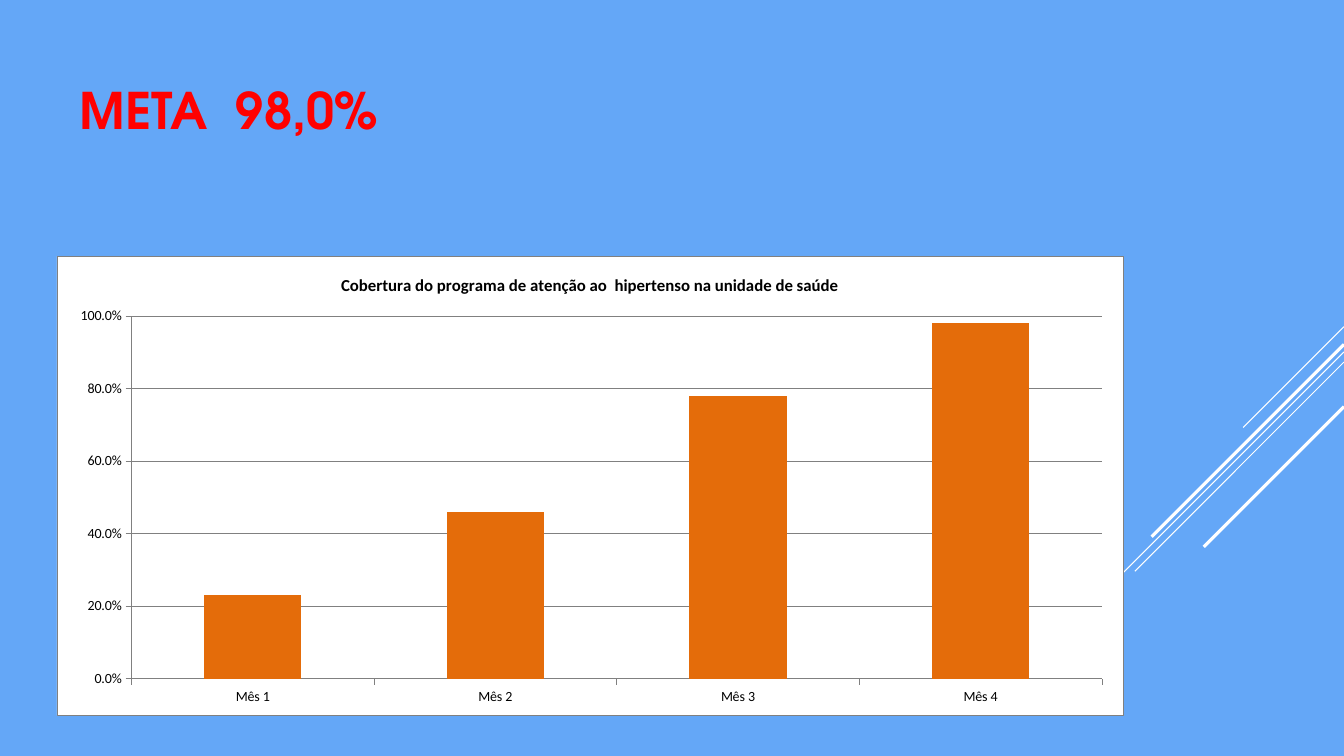
from lxml.etree import SubElement
from pptx import Presentation
from pptx.chart.data import CategoryChartData
from pptx.dml.color import RGBColor
from pptx.enum.chart import XL_CHART_TYPE, XL_TICK_MARK
from pptx.enum.shapes import MSO_CONNECTOR
from pptx.enum.text import MSO_ANCHOR
from pptx.oxml import parse_xml
from pptx.oxml.ns import nsdecls, qn
from pptx.util import Inches, Pt


def tint(code):
    """Turn a hex string into a colour."""
    return RGBColor.from_string(code)


def assign(target, values):
    """Set each attribute named in a dict."""
    for name, value in values.items():
        setattr(target, name, value)


class Deck:
    """Hold the style and the current slide, on a grid of 160 by 90 cells."""

    cols, rows = 160, 90
    white, gray, black = "FFFFFF", "808080", "000000"
    orange, red, blue = "E46C0A", "FF0000", "64A7F7"
    body, head = "Calibri", "TeX Gyre Adventor"

    def __init__(self):
        """Start a deck with one blank slide."""
        self.show = Presentation()
        assign(self.show, {"slide_width": Inches(13.33), "slide_height": Inches(7.5)})
        self.slide = self.show.slides.add_slide(self.show.slide_layouts[6])
        self.paint(self.slide.background.fill, self.blue)

    def place(self, *cells):
        """Turn column and row numbers, in turn, into lengths."""
        units = (self.show.slide_width / self.cols, self.show.slide_height / self.rows)
        return [round(cell * units[i % 2]) for i, cell in enumerate(cells)]

    def paint(self, fill, code):
        """Make a fill solid."""
        fill.solid()
        fill.fore_color.rgb = tint(code)

    def stroke(self, line, code, width):
        """Colour a line and set its width."""
        self.paint(line.fill, code)
        line.width = Pt(width)

    def style(self, font, code, **values):
        """Style a font."""
        assign(font, values)
        font.color.rgb = tint(code)

    def slant(self, row, run, width):
        """Draw a diagonal down and left from the right edge."""
        ends = self.place(self.cols, row, self.cols - run, row + run)
        line = self.slide.shapes.add_connector(MSO_CONNECTOR.STRAIGHT, *ends)
        self.stroke(line.line, self.white, width)
        SubElement(line.element.spPr, qn("a:effectLst"))

    def text(self, words, *cells):
        """Add the heading."""
        frame = self.slide.shapes.add_textbox(*self.place(*cells)).text_frame
        assign(frame, {"word_wrap": True, "vertical_anchor": MSO_ANCHOR.MIDDLE})
        run = frame.paragraphs[0].add_run()
        run.text = words
        self.style(run.font, self.red, name=self.head, size=Pt(36), bold=True)

    def panel(self, edge):
        """Build the white background of a chart part."""
        line = f'<a:solidFill><a:srgbClr val="{self.gray}"/></a:solidFill>' if edge else "<a:noFill/>"
        return parse_xml(
            f'<c:spPr {nsdecls("c", "a")}><a:solidFill><a:srgbClr val="{self.white}"/>'
            f'</a:solidFill><a:ln w="3175">{line}</a:ln></c:spPr>')

    def frame(self, chart, **shares):
        """Fix the inner plot area by shares of the chart and fill both areas."""
        root = chart.element.find(qn("c:chart"))
        plot = root.find(qn("c:plotArea"))
        for old in plot.findall(qn("c:layout")):
            plot.remove(old)
        values = {"layoutTarget": "inner", "xMode": "edge", "yMode": "edge", **shares}
        marks = "".join(f'<c:{name} val="{value}"/>' for name, value in values.items())
        plot.insert(0, parse_xml(
            f'<c:layout {nsdecls("c")}><c:manualLayout>{marks}</c:manualLayout></c:layout>'))
        plot.append(self.panel(False))
        root.addnext(self.panel(True))

    def bars(self, title, data, *cells):
        """Add the column chart."""
        source = CategoryChartData(number_format="0.0%")
        source.categories = list(data)
        source.add_series(title, list(data.values()))
        chart = self.slide.shapes.add_chart(
            XL_CHART_TYPE.COLUMN_CLUSTERED, *self.place(*cells), source).chart
        self.style(chart.font, self.black, name=self.body, size=Pt(10))
        assign(chart, {"has_legend": False, "has_title": True})
        chart.chart_title.include_in_layout = False
        chart.chart_title.text_frame.text = title
        run = chart.chart_title.text_frame.paragraphs[0].runs[0]
        self.style(run.font, self.black, name=self.body, size=Pt(12), bold=True)

        plot = chart.plots[0]
        assign(plot, {"gap_width": 150, "vary_by_categories": False})
        self.paint(plot.series[0].format.fill, self.orange)

        scale = chart.value_axis
        assign(scale, {"minimum_scale": 0, "maximum_scale": 1, "major_unit": 0.2,
                       "has_major_gridlines": True})
        assign(scale.tick_labels, {"number_format": "0.0%", "number_format_is_linked": False})
        for axis in (chart.category_axis, scale):
            axis.major_tick_mark = XL_TICK_MARK.OUTSIDE
            self.style(axis.tick_labels.font, self.black, name=self.body, size=Pt(10))
        for part in (chart.category_axis, scale, scale.major_gridlines):
            self.stroke(part.format.line, self.gray, 0.25)
        self.frame(chart, x=0.07, y=0.13, w=0.91, h=0.79)


def main():
    """Build the slide."""
    deck = Deck()
    slants = [(38.9, 12, 0.75), (41.9, 39.1, 0.75), (43.1, 24.9, 0.75),
              (41, 22.9, 2.25), (48.4, 16.7, 2.25)]
    for slant in slants:
        deck.slant(*slant)
    deck.bars("Cobertura do programa de atenção ao  hipertenso na unidade de saúde",
              {"Mês 1": 0.23, "Mês 2": 0.46, "Mês 3": 0.78, "Mês 4": 0.98},
              6.75, 30.5, 127, 54.7)
    deck.text("META  98,0%", 8.3, 3.1, 112, 19.8)
    deck.show.save("out.pptx")


if __name__ == "__main__":
    main()
